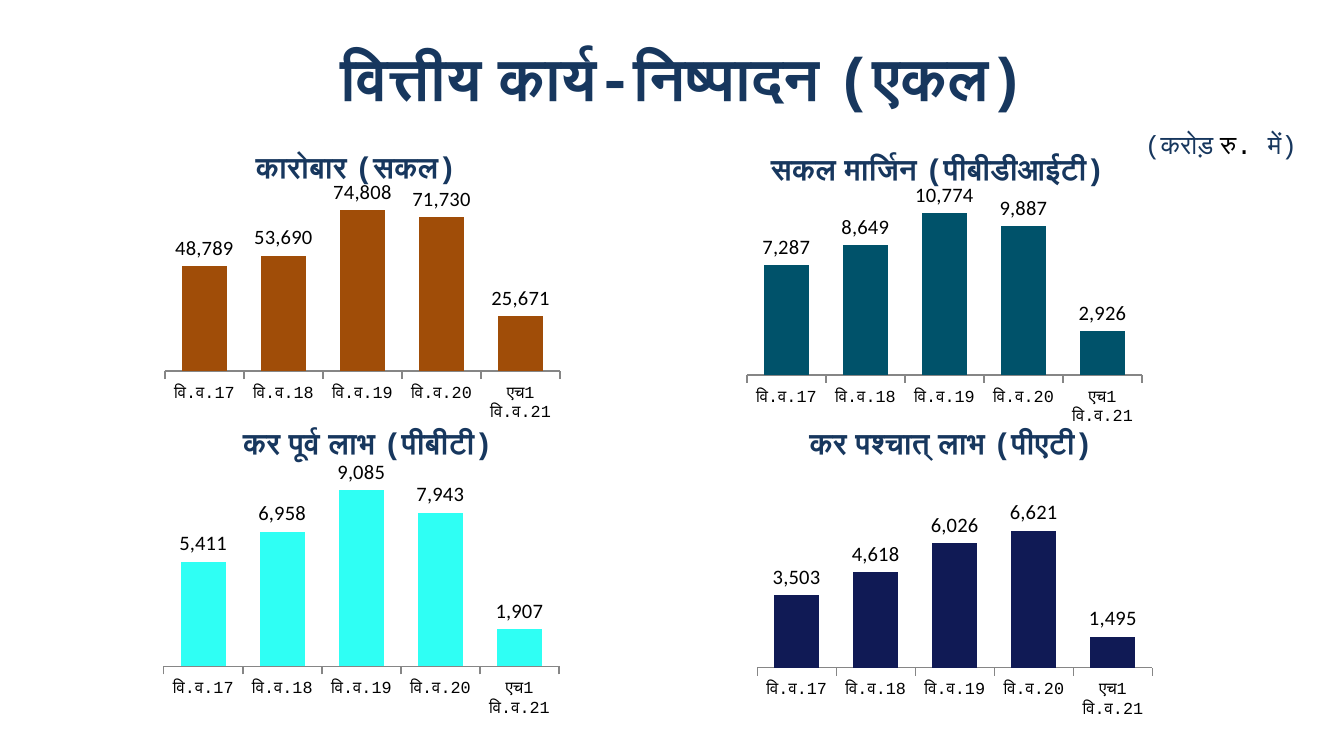
from lxml.etree import SubElement
from pptx import Presentation
from pptx.chart.data import CategoryChartData
from pptx.dml.color import RGBColor
from pptx.enum.chart import XL_CHART_TYPE, XL_LABEL_POSITION, XL_TICK_LABEL_POSITION, XL_TICK_MARK
from pptx.enum.text import MSO_AUTO_SIZE, PP_ALIGN
from pptx.oxml import parse_xml
from pptx.oxml.ns import nsdecls, qn
from pptx.util import Pt

NAVY = "17375E"
BLACK = "000000"
MONO = "Courier New"
SANS = "Calibri"
FORMAT = '_(* #,##0_);_(* \\(#,##0\\);_(* "-"??_);_('
YEARS = ["वि.व.17", "वि.व.18", "वि.व.19", "वि.व.20", "एच1 वि.व.21"]
PANELS = [
    ("कारोबार (सकल) ", (80.6, 76.3), (82, 96.5, 136), (0.025, 0.069, 0.682),
     (48789, 53690, 74808, 71730, 25671), 80000, "A04D08"),
    ("सकल मार्जिन (पीबीडीआईटी)", (387.4, 77), (393.8, 85, 147.6), (0.025, 0.131, 0.654),
     (7287, 8649, 10774, 9887, 2926), 12000, "00526A"),
    ("कर पूर्व लाभ (पीबीटी)", (82.1, 223.9), (81.4, 234.7, 156.2), (0.025, 0.119, 0.665),
     (5411, 6958, 9085, 7943, 1907), 10000, "2FFFF4"),
    ("कर पश्चात् लाभ (पीएटी)", (394.6, 223.9), (395.3, 234.7, 157), (0.041, 0.289, 0.495),
     (3503, 4618, 6026, 6621, 1495), 7000, "101A55"),
]


def color(code):
    """Turn a hex string into a colour."""
    return RGBColor.from_string(code)


def style(font, name, size, code):
    """Set the face, size and colour of a font."""
    font.name = name
    font.size = Pt(size)
    font.color.rgb = color(code)


def add_text(slide, box, parts, size, align=PP_ALIGN.CENTER, bold=False, inset=(7.2, 3.6)):
    """Add one line of text made of (words, colour) parts."""
    frame = slide.shapes.add_textbox(*map(Pt, box)).text_frame
    frame.word_wrap = True
    frame.auto_size = MSO_AUTO_SIZE.SHAPE_TO_FIT_TEXT
    frame.margin_left = frame.margin_right = Pt(inset[0])
    frame.margin_top = frame.margin_bottom = Pt(inset[1])
    line = frame.paragraphs[0]
    line.alignment = align
    for words, code in parts:
        run = line.add_run()
        run.text = words
        style(run.font, MONO, size, code)
        run.font.bold = bold


def place_plot(chart, left, top, height):
    """Fix the inner plot area as fractions of the chart."""
    area = chart._chartSpace.chart.plotArea
    for old in area.findall(qn("c:layout")):
        area.remove(old)
    layout = parse_xml(f"<c:layout {nsdecls('c')}><c:manualLayout/></c:layout>")
    rules = {"layoutTarget": "inner", "xMode": "edge", "yMode": "edge",
             "x": left, "y": top, "w": 0.838, "h": height}
    for tag, value in rules.items():
        SubElement(layout[0], qn(f"c:{tag}")).set("val", str(value))
    area.insert(0, layout)


def add_bars(slide, spot, plot, values, top, code):
    """Add a column chart with values above its bars."""
    left, up, height = spot
    data = CategoryChartData(number_format=FORMAT)
    data.categories = YEARS
    data.add_series("Series 1", values)
    chart = slide.shapes.add_chart(XL_CHART_TYPE.COLUMN_CLUSTERED, Pt(left), Pt(up),
                                   Pt(252.7), Pt(height), data).chart
    chart.has_title = chart.has_legend = False
    style(chart.font, SANS, 18, BLACK)
    place_plot(chart, *plot)

    scale = chart.value_axis
    scale.minimum_scale, scale.maximum_scale = 0, top
    scale.has_major_gridlines = False
    scale.visible = False

    axis = chart.category_axis
    axis.major_tick_mark = XL_TICK_MARK.OUTSIDE
    axis.tick_label_position = XL_TICK_LABEL_POSITION.LOW
    axis.format.line.color.rgb = color("868686")
    axis.format.line.width = Pt(0.75)
    style(axis.tick_labels.font, MONO, 9, BLACK)

    bars = chart.plots[0]
    bars.gap_width = 76
    bars.vary_by_categories = False
    series = bars.series[0]
    series.format.fill.solid()
    series.format.fill.fore_color.rgb = color(code)
    labels = series.data_labels
    labels.show_value = True
    labels.position = XL_LABEL_POSITION.OUTSIDE_END
    labels.number_format = FORMAT
    labels.number_format_is_linked = False
    style(labels.font, SANS, 11, BLACK)


def main():
    """Build the slide and save it."""
    deck = Presentation()
    deck.slide_width, deck.slide_height = Pt(720), Pt(405)
    slide = deck.slides.add_slide(deck.slide_layouts[6])
    for title, corner, spot, plot, values, top, code in PANELS:
        add_bars(slide, spot, plot, values, top, code)
        add_text(slide, (*corner, 229.7, 26.6), [(title, NAVY)], 16, bold=True)
    add_text(slide, (606.2, 65.5, 95.8, 24.5),
             [("(करोड़ ", NAVY), ("रु. ", BLACK), ("में)", NAVY)], 14, PP_ALIGN.RIGHT)
    add_text(slide, (47.5, 18.7, 636.5, 43.9), [("वित्तीय कार्य-निष्पादन (एकल)", NAVY)],
             32, bold=True, inset=(5, 2.9))
    deck.save("out.pptx")


if __name__ == "__main__":
    main()
